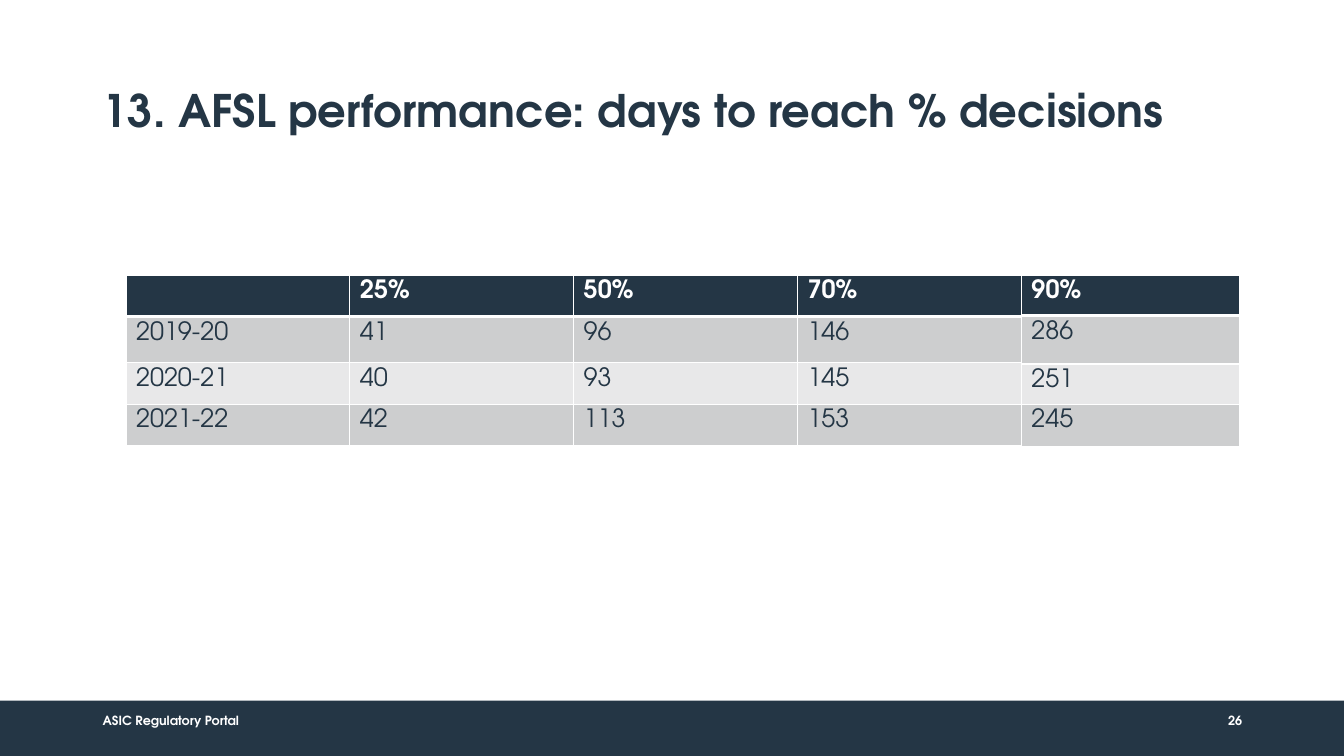
from lxml import etree
from pptx import Presentation
from pptx.dml.color import RGBColor
from pptx.enum.shapes import MSO_SHAPE
from pptx.enum.text import MSO_ANCHOR, PP_ALIGN
from pptx.oxml.ns import qn
from pptx.util import Inches, Pt

RECTANGLE = MSO_SHAPE.RECTANGLE
MIDDLE = MSO_ANCHOR.MIDDLE
LEFT, RIGHT = PP_ALIGN.LEFT, PP_ALIGN.RIGHT

FONT = "TeX Gyre Adventor"
NAVY = RGBColor(0x24, 0x36, 0x45)
WHITE = RGBColor(0xFF, 0xFF, 0xFF)
BAND_DARK = RGBColor(0xCD, 0xCE, 0xCF)
BAND_LIGHT = RGBColor(0xE8, 0xE8, 0xE9)

DAYS_BY_YEAR = [
    ["", "25%", "50%", "70%"],
    ["2019-20", "41", "96", "146"],
    ["2020-21", "40", "93", "145"],
    ["2021-22", "42", "113", "153"],
]
DAYS_TO_90 = [["90%"], ["286"], ["251"], ["245"]]


def style_font(font, size, color, bold):
    font.name = FONT
    font.size = Pt(size)
    font.color.rgb = color
    font.bold = bold


def add_title(s, text, left, top, width, height):
    title = s.shapes.title
    title.left, title.top = Inches(left), Inches(top)
    title.width, title.height = Inches(width), Inches(height)
    tf = title.text_frame
    tf.text = text
    tf.word_wrap = True
    tf.vertical_anchor = MIDDLE
    p = tf.paragraphs[0]
    p.alignment = LEFT
    p.line_spacing = 0.9
    style_font(p.runs[0].font, 32, NAVY, True)


def add_footer_text(s, text, left, top, width, align):
    tf = s.shapes.add_textbox(Inches(left), Inches(top),
                              Inches(width), Inches(0.4)).text_frame
    tf.text = text
    tf.word_wrap = True
    tf.vertical_anchor = MIDDLE
    if align == RIGHT:
        tf.margin_left = 0
    p = tf.paragraphs[0]
    p.alignment = align
    style_font(p.runs[0].font, 9, WHITE, True)


def add_footer(s, left, top, width, height):
    bar = s.shapes.add_shape(RECTANGLE, Inches(left), Inches(top),
                             Inches(width), Inches(height))
    bar.shadow.inherit = False
    bar.fill.solid()
    bar.fill.fore_color.rgb = NAVY
    bar.line.fill.background()
    add_footer_text(s, "ASIC Regulatory Portal", left + 0.92, top, 7.99, LEFT)
    add_footer_text(s, "26", left + width - 1.31, top, 0.4, RIGHT)


def set_borders(cell, widths):
    """Add white borders; widths maps a:lnL, a:lnR, a:lnT, a:lnB to points."""
    tc_pr = cell._tc.get_or_add_tcPr()
    for i, (tag, width) in enumerate(widths.items()):
        ln = etree.Element(qn(tag), w=str(Pt(width)))
        fill = etree.SubElement(ln, qn("a:solidFill"))
        etree.SubElement(fill, qn("a:srgbClr"), val=str(WHITE))
        tc_pr.insert(i, ln)


def add_days_table(s, rows, left, top, col_width, row_heights):
    cols = len(rows[0])
    table = s.shapes.add_table(
        len(rows), cols, Inches(left), Inches(top),
        Inches(col_width * cols), Inches(sum(row_heights))).table
    for column in table.columns:
        column.width = Inches(col_width)
    for i, (values, height) in enumerate(zip(rows, row_heights)):
        table.rows[i].height = Inches(height)
        header = i == 0
        band = NAVY if header else BAND_DARK if i % 2 else BAND_LIGHT
        for j, value in enumerate(values):
            cell = table.cell(i, j)
            cell.fill.solid()
            cell.fill.fore_color.rgb = band
            set_borders(cell, {"a:lnL": 1, "a:lnR": 1,
                               "a:lnT": 3 if i == 1 else 1,
                               "a:lnB": 3 if header else 1})
            cell.text = value
            style_font(cell.text_frame.paragraphs[0].font, 18,
                       WHITE if header else NAVY, header)


def main():
    prs = Presentation()
    prs.slide_width, prs.slide_height = Inches(13.33), Inches(7.5)
    s = prs.slides.add_slide(prs.slide_layouts[5])
    add_footer(s, 0, 6.95, 13.33, 0.55)
    add_title(s, "13. AFSL performance: days to reach % decisions",
              0.92, 0.4, 11.5, 1.45)
    add_days_table(s, DAYS_BY_YEAR, 1.25, 2.73, 2.22, [0.41, 0.46, 0.41, 0.41])
    add_days_table(s, DAYS_TO_90, 10.13, 2.73, 2.16, [0.4, 0.48, 0.4, 0.42])
    prs.save("out.pptx")


if __name__ == "__main__":
    main()
